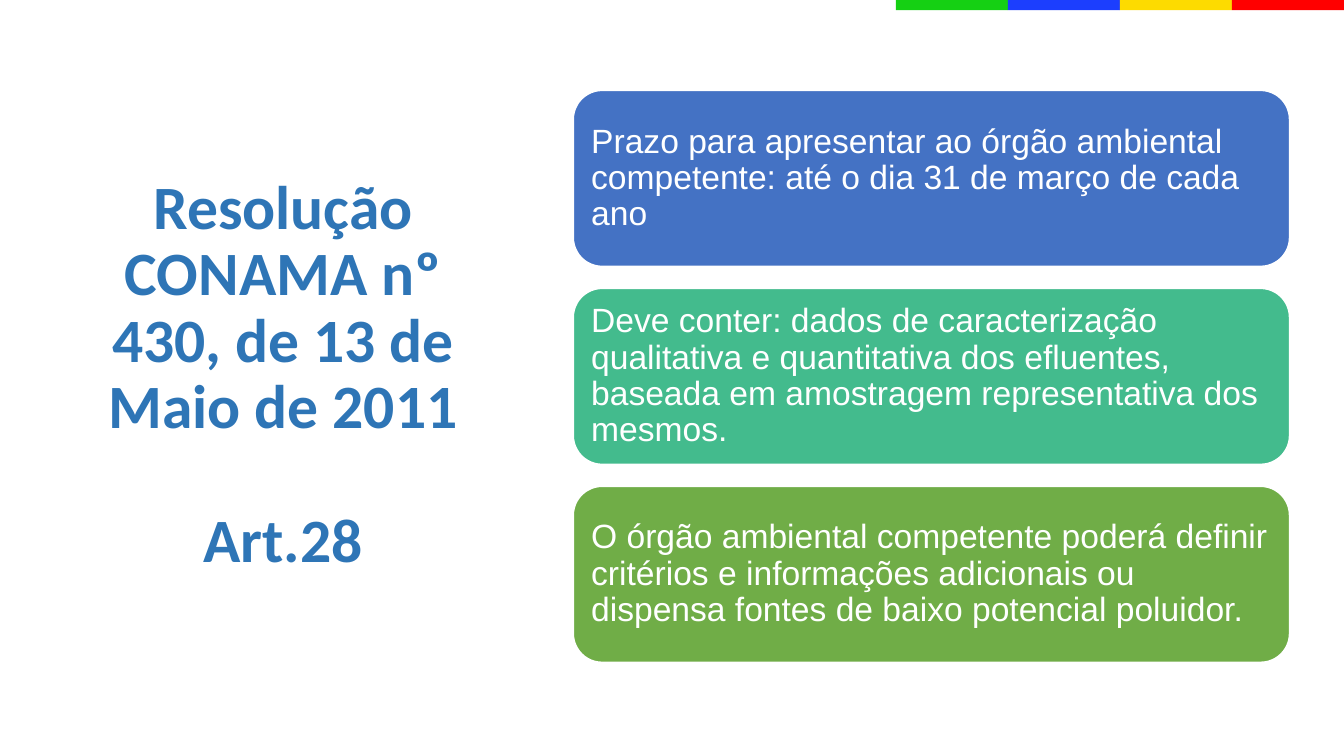
from pptx import Presentation
from pptx.dml.color import RGBColor
from pptx.enum.shapes import MSO_SHAPE
from pptx.enum.text import MSO_ANCHOR, PP_ALIGN
from pptx.util import Pt

STRIPE_COLOURS = ["15D013", "1C3EFE", "FDDB00", "FF0000"]
STRIPE_LEFT, STRIPE_WIDTH, STRIPE_HEIGHT = 640, 80, 7.2
TITLE = ["Resolução CONAMA nº 430, de 13 de Maio de 2011", "Art.28"]
RULES = [
    ("4472C4", "Prazo para apresentar ao órgão ambiental competente: "
               "até o dia 31 de março de cada ano"),
    ("43BB8D", "Deve conter: dados de caracterização qualitativa e quantitativa dos "
               "efluentes, baseada em amostragem representativa dos mesmos."),
    ("70AD47", "O órgão ambiental competente poderá definir critérios e informações "
               "adicionais ou dispensa fontes de baixo potencial poluidor."),
]
CARD_TOP, CARD_STEP = 64.1, 141.4


def colour(value):
    """Turn a hex string into a colour."""
    return RGBColor.from_string(value)


def add_block(slide, preset, left, top, width, height, fill):
    """Add a filled shape without outline or shadow."""
    block = slide.shapes.add_shape(preset, Pt(left), Pt(top), Pt(width), Pt(height))
    block.shadow.inherit = False
    block.fill.solid()
    block.fill.fore_color.rgb = colour(fill)
    block.line.fill.background()
    return block


def format_paragraph(paragraph, align, font, size, text_colour, bold=False):
    """Set the alignment, spacing and font of a paragraph."""
    paragraph.alignment = align
    paragraph.line_spacing = 0.9
    for run in paragraph.runs:
        run.font.name = font
        run.font.size = Pt(size)
        run.font.bold = bold
        run.font.color.rgb = colour(text_colour)


def add_title(slide):
    """Add the centred title with the article one blank line below."""
    title = slide.shapes.add_textbox(Pt(67.7), Pt(79.9), Pt(269.3), Pt(377.3))
    frame = title.text_frame
    frame.word_wrap = True
    frame.vertical_anchor = MSO_ANCHOR.MIDDLE
    resolution, article = frame.paragraphs[0], frame.add_paragraph()
    for paragraph, words in zip((resolution, article), TITLE):
        paragraph.text = words
        format_paragraph(paragraph, PP_ALIGN.CENTER, "Calibri", 44, "2E75B6", True)
    article.space_before = Pt(48)


def add_card(slide, top, fill, rule):
    """Add a rounded card holding one rule."""
    card = add_block(slide, MSO_SHAPE.ROUNDED_RECTANGLE, 409, top, 512.6, 126.7, fill)
    card.line.color.rgb = colour("FFFFFF")
    card.line.width = Pt(2)
    frame = card.text_frame
    frame.word_wrap = True
    frame.vertical_anchor = MSO_ANCHOR.MIDDLE
    frame.margin_top = frame.margin_bottom = Pt(7.2)
    frame.text = rule
    format_paragraph(frame.paragraphs[0], PP_ALIGN.LEFT, "Arial", 24, "FFFFFF")


def main():
    """Build the slide and save it."""
    presentation = Presentation()
    presentation.slide_width, presentation.slide_height = Pt(960), Pt(540)
    slide = presentation.slides.add_slide(presentation.slide_layouts[6])
    for index, fill in enumerate(STRIPE_COLOURS):
        add_block(slide, MSO_SHAPE.RECTANGLE, STRIPE_LEFT + index * STRIPE_WIDTH, 0,
                  STRIPE_WIDTH, STRIPE_HEIGHT, fill)
    add_title(slide)
    for index, (fill, rule) in enumerate(RULES):
        add_card(slide, CARD_TOP + index * CARD_STEP, fill, rule)
    presentation.save("out.pptx")


if __name__ == "__main__":
    main()
